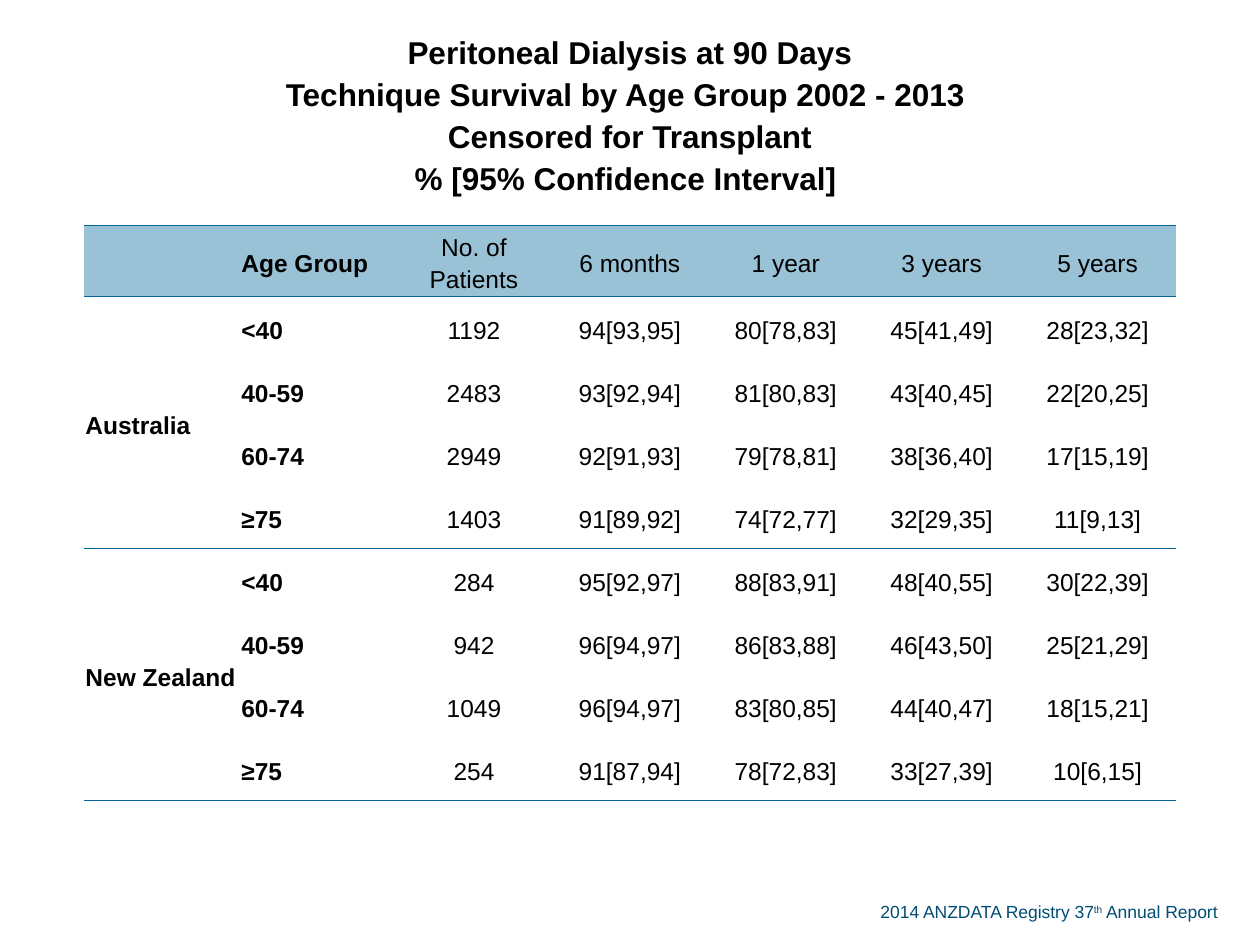
from lxml.etree import SubElement
from pptx import Presentation
from pptx.dml.color import RGBColor as RGB
from pptx.enum.text import MSO_ANCHOR as ANCHOR, PP_ALIGN as ALIGN
from pptx.oxml import parse_xml
from pptx.oxml.ns import nsdecls, qn
from pptx.util import Pt

# Content
TITLE = ["Peritoneal Dialysis at 90 Days",
         "Technique Survival by Age Group 2002 - 2013 \v"
         "Censored for Transplant\v% [95% Confidence Interval] "]
HEADER = ["", "Age Group", "No. of Patients", "6 months", "1 year", "3 years", "5 years"]
COUNTRIES = {
    "Australia": [
        ("<40", "1192", "94[93,95]", "80[78,83]", "45[41,49]", "28[23,32]"),
        ("40-59", "2483", "93[92,94]", "81[80,83]", "43[40,45]", "22[20,25]"),
        ("60-74", "2949", "92[91,93]", "79[78,81]", "38[36,40]", "17[15,19]"),
        ("≥75", "1403", "91[89,92]", "74[72,77]", "32[29,35]", "11[9,13]"),
    ],
    "New Zealand": [
        ("<40", "284", "95[92,97]", "88[83,91]", "48[40,55]", "30[22,39]"),
        ("40-59", "942", "96[94,97]", "86[83,88]", "46[43,50]", "25[21,29]"),
        ("60-74", "1049", "96[94,97]", "83[80,85]", "44[40,47]", "18[15,21]"),
        ("≥75", "254", "91[87,94]", "78[72,83]", "33[27,39]", "10[6,15]"),
    ],
}
FOOTER = [("2014 ANZDATA Registry 37", 0), ("th", 30000), (" Annual Report", 0)]

COLORS = {"text": "000000", "rule": "006699", "header": "99C2D6", "footer": "004D73"}
FONT = "Arial"
LEFT, COL_W = 48.1, 89.1
TITLE_H, HEADER_H, ROW_H = 128.6, 40.6, 36
MARGINS = {"margin_left": Pt(0.72), "margin_right": Pt(0.72),
           "margin_top": Pt(0.72), "margin_bottom": 0}


def style_font(font, size, color, bold=False):
    for name, value in {"name": FONT, "size": Pt(size), "bold": bold}.items():
        setattr(font, name, value)
    font.color.rgb = RGB.from_string(COLORS[color])


def set_borders(cell, ruled):
    """Rule the given sides (T, B) and clear the others."""
    pr = cell._tc.get_or_add_tcPr()
    for i, side in enumerate("LRTB"):
        ln = parse_xml(f'<a:ln{side} {nsdecls("a")} w="6350"/>')
        if side in ruled:
            fill = SubElement(ln, qn("a:solidFill"))
            SubElement(fill, qn("a:srgbClr"), val=COLORS["rule"])
        else:
            SubElement(ln, qn("a:noFill"))
        pr.insert(i, ln)


def write_cell(cell, lines, size=14, bold=False, align=ALIGN.CENTER):
    cell.vertical_anchor = ANCHOR.MIDDLE
    for name, value in MARGINS.items():
        setattr(cell, name, value)
    tf = cell.text_frame
    for i, line in enumerate(lines):
        p = tf.add_paragraph() if i else tf.paragraphs[0]
        p.text = line
        p.alignment, p.line_spacing = align, 1.19
        for r in p.runs:
            style_font(r.font, size, "text", bold)


prs = Presentation()
prs.slide_width, prs.slide_height = Pt(720), Pt(540)
s = prs.slides.add_slide(prs.slide_layouts[6])

# Footer
box = s.shapes.add_textbox(Pt(496), Pt(511.2), Pt(215.3), Pt(19.4))
tf = box.text_frame
tf.word_wrap = True
for text, baseline in FOOTER:
    r = tf.paragraphs[0].add_run()
    r.text = text
    style_font(r.font, 10, "footer")
    if baseline:
        r.font._element.set("baseline", str(baseline))

# Table grid
rows = [HEADER]
groups = []
for country, ages in COUNTRIES.items():
    groups.append((len(rows) + 1, len(ages)))
    rows += [(country if i == 0 else "", *age) for i, age in enumerate(ages)]
heights = [TITLE_H, HEADER_H] + [ROW_H] * (len(rows) - 1)
n_cols = len(HEADER)
table = s.shapes.add_table(len(heights), n_cols, Pt(LEFT), 0,
                           Pt(COL_W * n_cols), Pt(sum(heights))).table
table.first_row = table.horz_banding = False
for col in table.columns:
    col.width = Pt(COL_W)
for row, height in zip(table.rows, heights):
    row.height = Pt(height)

# Fills and rules: a rule lies under the title, the header and each country
ruled_below = {0, 1} | {first + count - 1 for first, count in groups}
for i in range(len(heights)):
    sides = ("T" if i - 1 in ruled_below else "") + ("B" if i in ruled_below else "")
    for j in range(n_cols):
        cell = table.cell(i, j)
        if i == 1:
            cell.fill.solid()
            cell.fill.fore_color.rgb = RGB.from_string(COLORS["header"])
        else:
            cell.fill.background()
        set_borders(cell, sides)

# Merged cells
table.cell(0, 0).merge(table.cell(0, n_cols - 1))
for first, count in groups:
    table.cell(first, 0).merge(table.cell(first + count - 1, 0))
    set_borders_cell = table.cell(first, 0)
    for ln in set_borders_cell._tc.tcPr.findall(qn("a:lnT")) + set_borders_cell._tc.tcPr.findall(qn("a:lnB")) \
            + set_borders_cell._tc.tcPr.findall(qn("a:lnL")) + set_borders_cell._tc.tcPr.findall(qn("a:lnR")):
        set_borders_cell._tc.tcPr.remove(ln)
    set_borders(set_borders_cell, "TB")

# Text: the first two columns are bold and left-aligned
write_cell(table.cell(0, 0), TITLE, size=18, bold=True)
for i, values in enumerate(rows, start=1):
    for j, text in enumerate(values):
        if text:
            label = j < 2
            write_cell(table.cell(i, j), [text], bold=label,
                       align=ALIGN.LEFT if label else ALIGN.CENTER)

prs.save("out.pptx")
